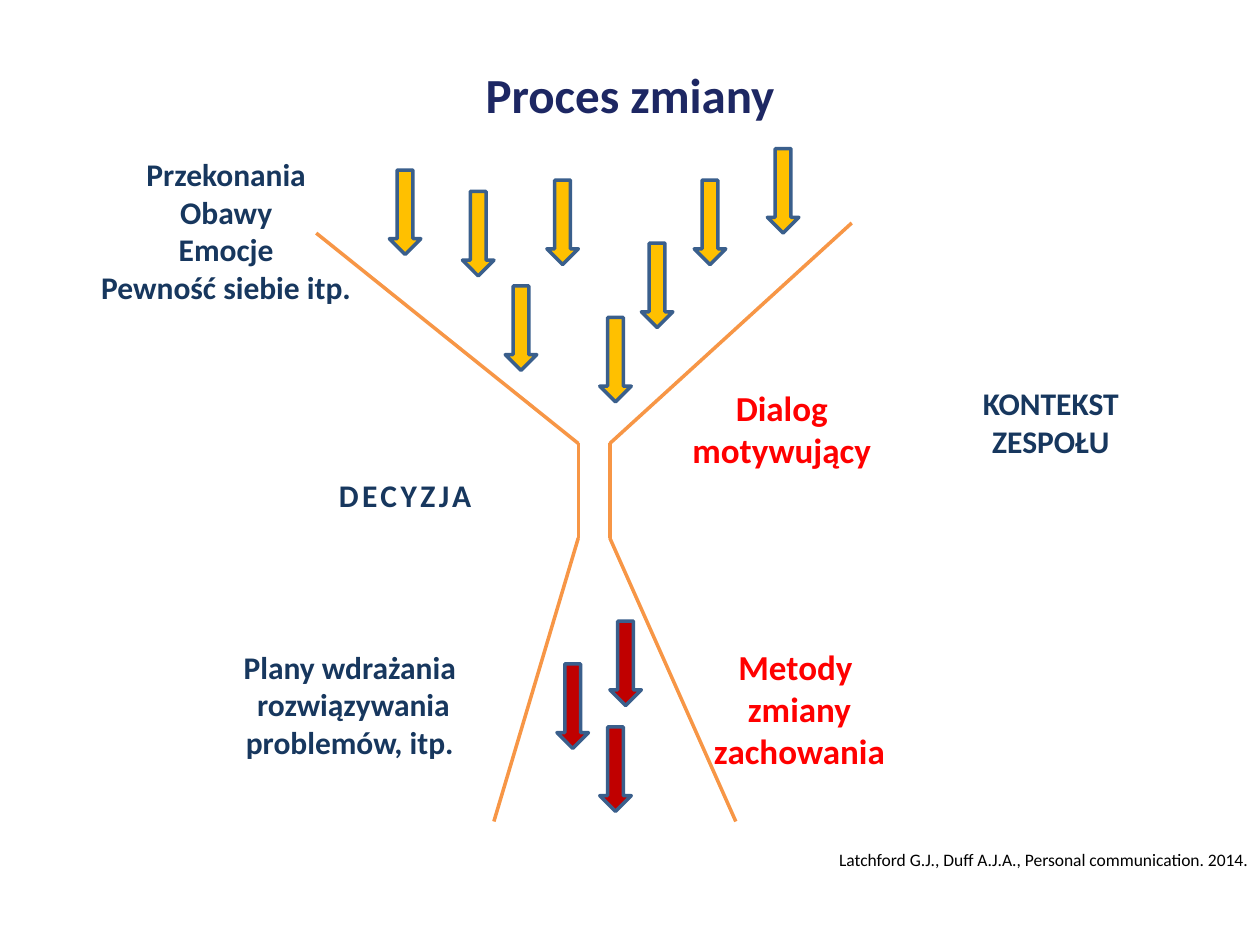
from itertools import pairwise

from lxml.etree import SubElement
from pptx import Presentation
from pptx.dml.color import RGBColor
from pptx.enum.shapes import MSO_CONNECTOR, MSO_SHAPE
from pptx.enum.text import MSO_ANCHOR, PP_ALIGN
from pptx.oxml.ns import qn
from pptx.util import Inches, Pt

NAVY = RGBColor(0x1D, 0x27, 0x63)
BLUE = RGBColor(0x17, 0x37, 0x5E)
RED = RGBColor(0xFF, 0x00, 0x00)
BLACK = RGBColor(0x00, 0x00, 0x00)
ORANGE = RGBColor(0xF7, 0x96, 0x46)
GOLD = RGBColor(0xFF, 0xC0, 0x00)
CRIMSON = RGBColor(0xC0, 0x00, 0x00)
ARROW_EDGE = RGBColor(0x3A, 0x5F, 0x8C)

FONT = "Calibri"
TITLE = "Proces zmiany"
DECISION = "DECYZJA"
ARROW_SIZE = (0.25, 0.67)
LINE_WIDTH = Pt(2)

FUNNEL_SIDES = [
    [(2.51, 1.85), (4.59, 3.52), (4.59, 4.27), (3.92, 6.52)],
    [(6.76, 1.77), (4.84, 3.52), (4.84, 4.27), (5.84, 6.52)],
]

ARROWS = {
    GOLD: [(3.09, 1.35), (3.67, 1.52), (4.01, 2.27), (4.34, 1.43),
           (4.76, 2.52), (5.51, 1.43), (5.09, 1.93), (6.09, 1.18)],
    CRIMSON: [(4.42, 5.27), (4.76, 5.77), (4.84, 4.93)],
}

LABELS = [
    ("Dialog motywujący", (5.34, 3.02, 1.73, 0.77), 20, RED, True, PP_ALIGN.CENTER),
    (DECISION, (2.59, 3.73, 2.09, 0.4), 18, BLUE, True, PP_ALIGN.LEFT),
    ("Metody \nzmiany\nzachowania", (5.16, 5.07, 2.37, 1.1), 20, RED, True, PP_ALIGN.CENTER),
    ("Plany wdrażania \nrozwiązywania problemów, itp. ", (1.6, 5.09, 2.41, 1),
     18, BLUE, True, PP_ALIGN.CENTER),
    ("Przekonania\nObawy\nEmocje\nPewność siebie itp.", (-0.08, 1.18, 3.75, 1.3),
     18, BLUE, True, PP_ALIGN.CENTER),
    ("KONTEKST ZESPOŁU", (7.32, 3, 2.04, 0.7), 18, BLUE, True, PP_ALIGN.CENTER),
    ("Latchford G.J., Duff A.J.A., Personal communication. 2014.",
     (-0.01, 6.69, 10.01, 0.27), 10, BLACK, False, PP_ALIGN.RIGHT),
]


def write(frame, text, size, color, bold, align):
    frame.word_wrap = True
    frame.text = text
    for paragraph in frame.paragraphs:
        paragraph.alignment = align
        for run in paragraph.runs:
            run.font.name = FONT
            run.font.size = Pt(size)
            run.font.bold = bold
            run.font.color.rgb = color


def add_funnel_side(slide, points):
    for start, end in pairwise(points):
        edge = slide.shapes.add_connector(
            MSO_CONNECTOR.STRAIGHT, *map(Inches, start + end))
        edge.line.color.rgb = ORANGE
        edge.line.width = LINE_WIDTH
        SubElement(edge._element.spPr, qn("a:effectLst"))


def add_arrow(slide, corner, color):
    arrow = slide.shapes.add_shape(
        MSO_SHAPE.DOWN_ARROW, *map(Inches, corner + ARROW_SIZE))
    arrow.shadow.inherit = False
    arrow.fill.solid()
    arrow.fill.fore_color.rgb = color
    arrow.line.color.rgb = ARROW_EDGE
    arrow.line.width = LINE_WIDTH


def add_label(slide, text, place, *style):
    label = slide.shapes.add_textbox(*map(Inches, place))
    write(label.text_frame, text, *style)
    if text == DECISION:
        run = label.text_frame.paragraphs[0].runs[0]
        run.font._element.set("spc", "200")


def main():
    deck = Presentation()
    deck.slide_width, deck.slide_height = Inches(10), Inches(7.5)
    slide = deck.slides.add_slide(deck.slide_layouts[5])

    title = slide.shapes.title
    title.left, title.top, title.width, title.height = map(Inches, (0.5, 0.32, 9, 0.85))
    write(title.text_frame, TITLE, 28, NAVY, True, PP_ALIGN.CENTER)
    title.text_frame.vertical_anchor = MSO_ANCHOR.MIDDLE

    for points in FUNNEL_SIDES:
        add_funnel_side(slide, points)
    for color, corners in ARROWS.items():
        for corner in corners:
            add_arrow(slide, corner, color)
    for label in LABELS:
        add_label(slide, *label)

    deck.save("out.pptx")


if __name__ == "__main__":
    main()
